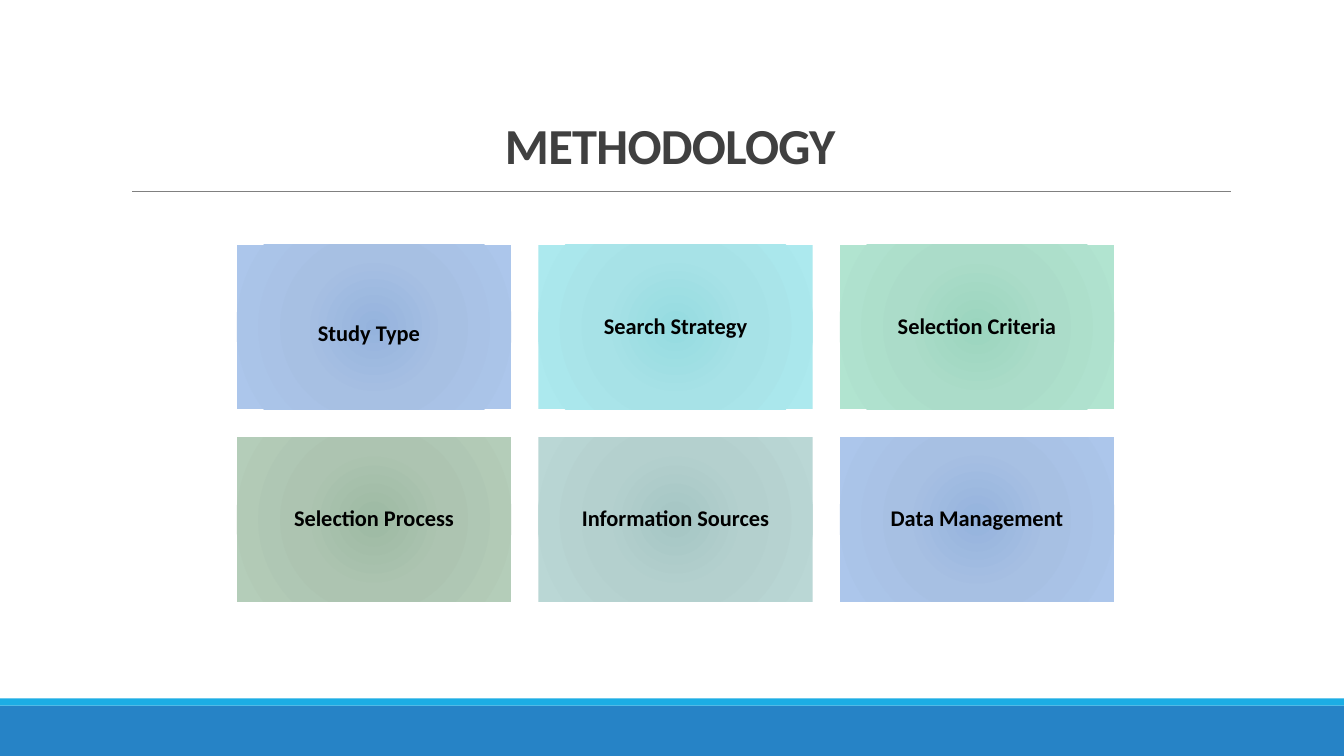
"""Build the Methodology slide: a title over a two-by-three grid of steps."""
from pptx import Presentation
from pptx import util as u
from pptx.dml.color import RGBColor
from pptx.enum import shapes, text
from pptx.oxml import parse_xml
from pptx.oxml.ns import nsdecls

TITLE = "METHODOLOGY"
BLUE = ("95B3DD", "A7C0E3", "ACC6EB")
CYAN = ("95DBE0", "A7E2E7", "ACE9EE")
MINT = ("9BD5BE", "ABDCC9", "B1E4D0")
SAGE = ("9DBAA3", "ADC4B1", "B4CDB9")
TEAL = ("A5C6C4", "B4D0CE", "BAD7D5")
STEPS = [
    (("Study Type", 16), (" ", 32), BLUE),
    (("Search Strategy", 16), CYAN),
    (("Selection Criteria", 16), MINT),
    (("Selection Process", 16), SAGE),
    (("Information Sources", 16), TEAL),
    (("Data Management", 16), BLUE),
]
STOPS = (0, 45, 100)
BANDS = [
    (7, 0.5, RGBColor(0x26, 0x83, 0xC6)),
    (6.93, 0.07, RGBColor(0x1C, 0xAD, 0xE4)),
]
BLACK = RGBColor(0, 0, 0)
CHARCOAL = RGBColor(0x40, 0x40, 0x40)
GREY = RGBColor(0x80, 0x80, 0x80)
SLIDE_WIDTH, SLIDE_HEIGHT = 13.33, 7.5
COLUMNS = 3
GRID_LEFT, GRID_TOP = 2.35, 2.43
CARD_WIDTH, CARD_HEIGHT = 2.72, 1.63
PITCH_X, PITCH_Y = 2.99, 1.91
INSET = u.Inches(0.07)
TITLE_FRAME = {"word_wrap": True, "vertical_anchor": text.MSO_ANCHOR.BOTTOM}
CARD_FRAME = {
    "word_wrap": True, "vertical_anchor": text.MSO_ANCHOR.MIDDLE,
    "margin_left": INSET, "margin_right": INSET,
    "margin_top": INSET, "margin_bottom": INSET,
}


def apply(target, values):
    for name, value in values.items():
        setattr(target, name, value)


def add_run(paragraph, words, size, color):
    run = paragraph.add_run()
    run.text = words
    apply(run.font, {"name": "Calibri", "size": u.Pt(size), "bold": bool(words.strip())})
    run.font.color.rgb = color
    return run


def add_box(slide, left, top, width, height):
    box = slide.shapes.add_shape(
        shapes.MSO_SHAPE.RECTANGLE, *map(u.Inches, (left, top, width, height)))
    box.shadow.inherit = False
    box.line.fill.background()
    return box


def fill_radial(card, colors):
    stops = "".join(
        f'<a:gs pos="{stop * 1000}"><a:srgbClr val="{color}"/></a:gs>'
        for stop, color in zip(STOPS, colors))
    gradient = parse_xml(
        f'<a:gradFill {nsdecls("a")} rotWithShape="1"><a:gsLst>{stops}</a:gsLst>'
        '<a:path path="circle"><a:fillToRect l="100000" t="100000" r="100000" b="100000"/>'
        '</a:path></a:gradFill>')
    card.fill.background()
    properties = card.element.spPr
    properties.replace(properties.find("{*}noFill"), gradient)


def add_title(slide):
    frame = slide.shapes.add_textbox(*map(u.Inches, (4.91, 0.89, 3.59, 0.89))).text_frame
    apply(frame, TITLE_FRAME)
    heading = frame.paragraphs[0]
    heading.line_spacing = 0.85
    run = add_run(heading, TITLE, 36, CHARCOAL)
    run.font._element.set("spc", "-50")


def add_rule(slide):
    rule = slide.shapes.add_connector(
        shapes.MSO_CONNECTOR.STRAIGHT, *map(u.Inches, (1.31, 1.9, 12.21, 1.9)))
    rule.line.color.rgb = GREY
    rule.line.width = u.Pt(0.5)
    rule.element.spPr.append(parse_xml(f'<a:effectLst {nsdecls("a")}/>'))


def add_card(slide, index, runs, colors):
    row, column = divmod(index, COLUMNS)
    card = add_box(slide, GRID_LEFT + column * PITCH_X, GRID_TOP + row * PITCH_Y,
                   CARD_WIDTH, CARD_HEIGHT)
    fill_radial(card, colors)
    apply(card.text_frame, CARD_FRAME)
    label = card.text_frame.paragraphs[0]
    apply(label, {"alignment": text.PP_ALIGN.CENTER, "line_spacing": 0.9})
    for words, size in runs:
        add_run(label, words, size, BLACK)


def main():
    deck = Presentation()
    apply(deck, {"slide_width": u.Inches(SLIDE_WIDTH), "slide_height": u.Inches(SLIDE_HEIGHT)})
    slide = deck.slides.add_slide(deck.slide_layouts[6])
    for top, height, color in BANDS:
        band = add_box(slide, 0, top, SLIDE_WIDTH, height)
        band.fill.solid()
        band.fill.fore_color.rgb = color
    add_rule(slide)
    add_title(slide)
    for index, (*runs, colors) in enumerate(STEPS):
        add_card(slide, index, runs, colors)
    deck.save("out.pptx")


if __name__ == "__main__":
    main()
